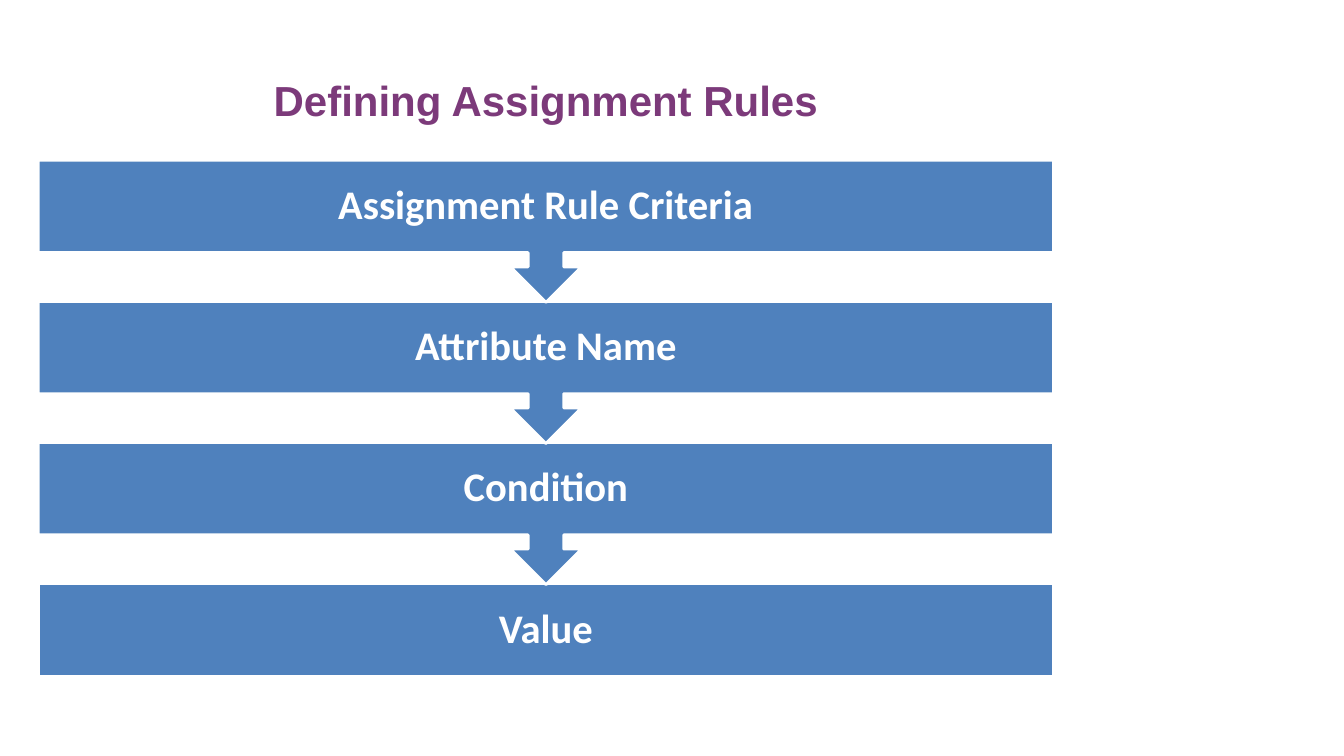
from dataclasses import dataclass

from pptx import Presentation
from pptx.dml.color import RGBColor
from pptx.enum.shapes import MSO_SHAPE
from pptx.enum.text import MSO_ANCHOR, PP_ALIGN
from pptx.util import Pt

PX = 9144
CENTER = PP_ALIGN.CENTER
MIDDLE, BOTTOM = MSO_ANCHOR.MIDDLE, MSO_ANCHOR.BOTTOM
RECTANGLE, CALLOUT = MSO_SHAPE.RECTANGLE, MSO_SHAPE.DOWN_ARROW_CALLOUT

LEFT, WIDTH = 38, 1007
TITLE_TOP, TITLE_HEIGHT = 16, 113
STEPS_TOP, STEP_PITCH = 159, 140
BAR_HEIGHT, CALLOUT_HEIGHT = 92, 141
STEP_INSET = 23
STEPS = ["Assignment Rule Criteria", "Attribute Name", "Condition", "Value"]


@dataclass(frozen=True)
class Theme:
    """Colours, fonts and type sizes of the slide."""
    title_color: RGBColor = RGBColor(0x7C, 0x3A, 0x7A)
    step_fill: RGBColor = RGBColor(0x4F, 0x81, 0xBD)
    white: RGBColor = RGBColor(0xFF, 0xFF, 0xFF)
    title_font: str = "Arial"
    step_font: str = "Calibri"
    title_size: int = 30
    step_size: int = 29
    outline: int = 2


THEME = Theme()


def px(*lengths):
    """Turn pixel lengths into EMU."""
    return [length * PX for length in lengths]


def write_line(box, text, anchor, font_name, size, color):
    """Write one bold centred line into a box."""
    frame = box.text_frame
    frame.word_wrap = True
    frame.vertical_anchor = anchor
    para = frame.paragraphs[0]
    para.text = text
    para.alignment = CENTER
    font = para.font
    font.name, font.size, font.bold = font_name, Pt(size), True
    font.color.rgb = color
    return para


def add_title(page, text):
    """Add the slide title."""
    box = page.shapes.add_textbox(*px(LEFT, TITLE_TOP, WIDTH, TITLE_HEIGHT))
    write_line(box, text, BOTTOM, THEME.title_font, THEME.title_size, THEME.title_color)


def add_step(page, text, top, kind, height):
    """Add one step of the flow, with its label inside."""
    step = page.shapes.add_shape(kind, *px(LEFT, top, WIDTH, height))
    step.shadow.inherit = False
    step.fill.solid()
    step.fill.fore_color.rgb = THEME.step_fill
    step.line.color.rgb = THEME.white
    step.line.width = Pt(THEME.outline)
    frame = step.text_frame
    frame.margin_left, frame.margin_top, frame.margin_right, frame.margin_bottom = px(*[STEP_INSET] * 4)
    para = write_line(step, text, MIDDLE, THEME.step_font, THEME.step_size, THEME.white)
    para.line_spacing = 0.9


def add_flow(page, labels):
    """Stack the steps from the last one up, so that each arrow lies over the next bar."""
    last = len(labels) - 1
    for index in range(last, -1, -1):
        kind, height = (RECTANGLE, BAR_HEIGHT) if index == last else (CALLOUT, CALLOUT_HEIGHT)
        add_step(page, labels[index], STEPS_TOP + index * STEP_PITCH, kind, height)


def main():
    """Build and save the slide."""
    deck = Presentation()
    deck.slide_width, deck.slide_height = px(1333, 750)
    page = deck.slides.add_slide(deck.slide_layouts[6])
    add_title(page, "Defining Assignment Rules")
    add_flow(page, STEPS)
    deck.save("out.pptx")


if __name__ == "__main__":
    main()
